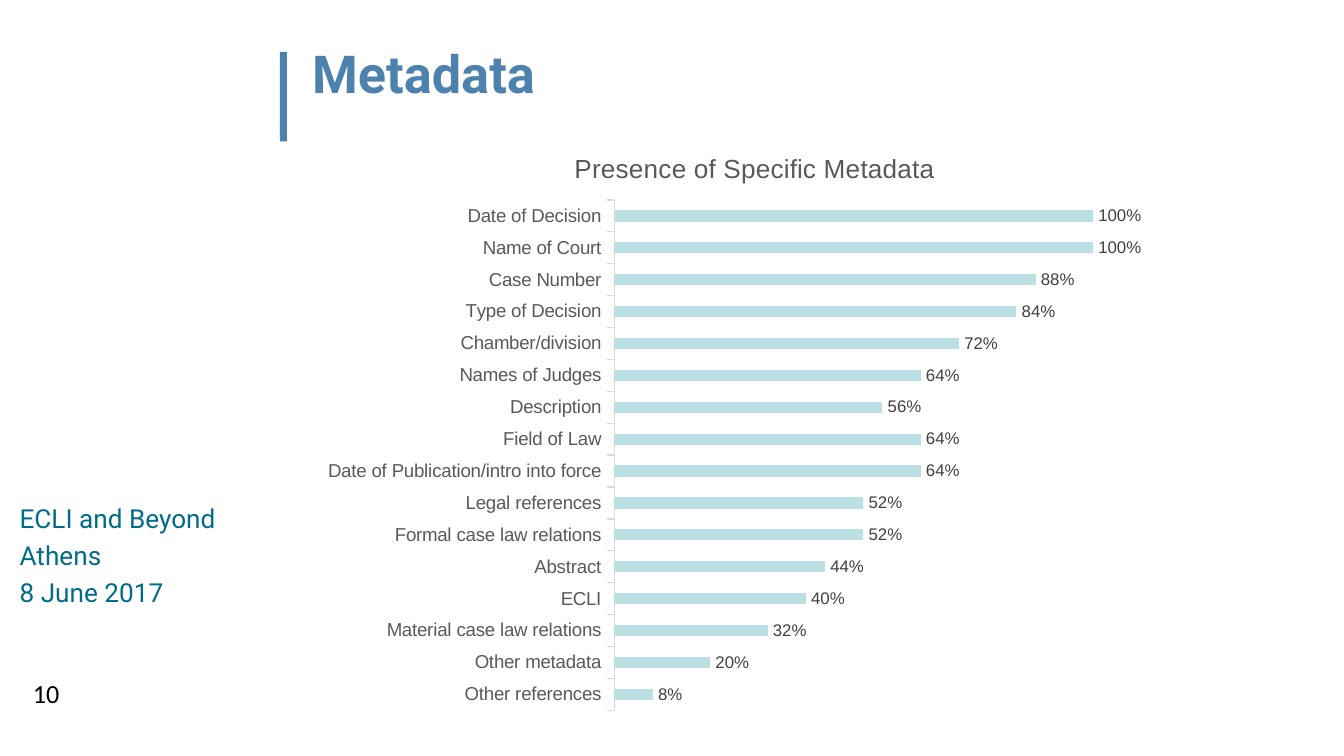
from lxml.etree import Element, SubElement
from pptx import Presentation
from pptx.chart.data import CategoryChartData
from pptx.dml.color import RGBColor
from pptx.enum.chart import XL_CHART_TYPE, XL_LABEL_POSITION, XL_TICK_MARK
from pptx.enum.shapes import MSO_SHAPE
from pptx.enum.text import MSO_ANCHOR, MSO_AUTO_SIZE, PP_ALIGN
from pptx.oxml.ns import qn
from pptx.util import Emu, Pt

BLUE, TEAL, PALE_TEAL = "4C82AD", "006C87", "BBE0E3"
BLACK, DARK_GREY, GREY, LIGHT_GREY = "000000", "404040", "595959", "D9D9D9"

METADATA = [
    ("Date of Decision", 1),
    ("Name of Court", 1),
    ("Case Number", 0.88),
    ("Type of Decision", 0.84),
    ("Chamber/division", 0.72),
    ("Names of Judges", 0.64),
    ("Description", 0.56),
    ("Field of Law", 0.64),
    ("Date of Publication/intro into force", 0.64),
    ("Legal references", 0.52),
    ("Formal case law relations", 0.52),
    ("Abstract", 0.44),
    ("ECLI", 0.4),
    ("Material case law relations", 0.32),
    ("Other metadata", 0.2),
    ("Other references", 0.08),
]


def px(length):
    """Convert px to EMU, at 96 px to the inch."""
    return Emu(length * 9525)


def color(hex_string):
    return RGBColor.from_string(hex_string)


def style_font(font, name, size, hex_color, bold=False):
    font.name = name
    font.size = Pt(size)
    font.bold = bold
    font.color.rgb = color(hex_color)


def clear_insets(text_frame):
    text_frame.margin_left = text_frame.margin_right = 0
    text_frame.margin_top = text_frame.margin_bottom = 0


def add_heading(slide, left, top, width, height):
    bar = slide.shapes.add_shape(MSO_SHAPE.RECTANGLE, px(left), px(top), px(5), px(height))
    bar.shadow.inherit = False
    bar.fill.solid()
    bar.fill.fore_color.rgb = color(BLUE)
    bar.line.fill.background()

    title = slide.shapes.title
    title.left, title.top = px(left + 23), px(top - 1)
    title.width, title.height = px(width - 23), px(38)
    text_frame = title.text_frame
    text_frame.text = "Metadata"
    text_frame.auto_size = MSO_AUTO_SIZE.NONE
    text_frame.vertical_anchor = MSO_ANCHOR.TOP
    clear_insets(text_frame)
    paragraph = text_frame.paragraphs[0]
    paragraph.alignment = PP_ALIGN.LEFT
    paragraph.line_spacing = 0.85
    style_font(paragraph.runs[0].font, "Roboto", 28, BLUE, bold=True)


def add_text(slide, left, top, width, height, lines, font_name, hex_color):
    box = slide.shapes.add_textbox(px(left), px(top), px(width), px(height))
    text_frame = box.text_frame
    text_frame.word_wrap = True
    text_frame.text = "\n".join(lines)
    for index, paragraph in enumerate(text_frame.paragraphs):
        if index:
            paragraph.space_before = Pt(3)
        style_font(paragraph.runs[0].font, font_name, 14, hex_color)
    return text_frame


def fix_layout(parent, position, target=None, **fractions):
    """Place a chart part by fractions of the chart."""
    layout = parent.find(qn("c:layout"))
    if layout is not None:
        parent.remove(layout)
    layout = Element(qn("c:layout"))
    parent.insert(position, layout)
    manual = SubElement(layout, qn("c:manualLayout"))
    settings = {"layoutTarget": target} if target else {}
    settings.update(xMode="edge", yMode="edge", **fractions)
    for name, value in settings.items():
        SubElement(manual, qn(f"c:{name}")).set("val", str(value))


def add_metadata_chart(slide, left, top, width, height):
    data = CategoryChartData(number_format="0%")
    names, shares = zip(*reversed(METADATA))
    data.categories = names
    data.add_series("Series 1", shares)
    chart = slide.shapes.add_chart(
        XL_CHART_TYPE.BAR_CLUSTERED, px(left), px(top), px(width), px(height), data
    ).chart
    chart.has_legend = False
    style_font(chart.font, "Arial", 10, BLACK)

    title = chart.chart_title
    title.text_frame.text = "Presence of Specific Metadata"
    style_font(title.text_frame.paragraphs[0].runs[0].font, "Arial", 14, GREY)
    title.include_in_layout = False
    fix_layout(title.element, 1, x=0.29, y=0.03)
    plot_area = chart.element.find(".//" + qn("c:plotArea"))
    fix_layout(plot_area, 0, target="inner", x=0.34, y=0.12, w=0.64, h=0.86)

    category_axis = chart.category_axis
    category_axis.has_major_gridlines = False
    category_axis.major_tick_mark = XL_TICK_MARK.OUTSIDE
    category_axis.minor_tick_mark = XL_TICK_MARK.NONE
    category_axis.format.line.color.rgb = color(LIGHT_GREY)
    category_axis.format.line.width = Pt(0.75)
    style_font(category_axis.tick_labels.font, "Arial", 10, GREY)

    value_axis = chart.value_axis
    value_axis.visible = False
    value_axis.has_major_gridlines = False
    value_axis.minimum_scale, value_axis.maximum_scale = 0, 1.2
    value_axis.tick_labels.number_format = "0%"
    value_axis.tick_labels.number_format_is_linked = False

    plot = chart.plots[0]
    plot.gap_width = 182
    plot.vary_by_categories = False
    series = plot.series[0]
    series.format.fill.solid()
    series.format.fill.fore_color.rgb = color(PALE_TEAL)
    labels = series.data_labels
    labels.show_value = True
    labels.position = XL_LABEL_POSITION.OUTSIDE_END
    labels.number_format = "0%"
    labels.number_format_is_linked = False
    style_font(labels.font, "Arial", 9, DARK_GREY)


def main():
    presentation = Presentation()
    presentation.slide_width, presentation.slide_height = px(960), px(540)
    slide = presentation.slides.add_slide(presentation.slide_layouts[5])
    add_heading(slide, 200, 37, 732, 64)
    add_text(slide, 14, 479, 70, 37, ["10"], "Calibri", BLACK)
    event = ["ECLI and Beyond", "Athens", "8 June 2017"]
    clear_insets(add_text(slide, 14, 359, 147, 89, event, "Roboto", TEAL))
    add_metadata_chart(slide, 221, 92, 641, 424)
    presentation.save("out.pptx")


if __name__ == "__main__":
    main()
